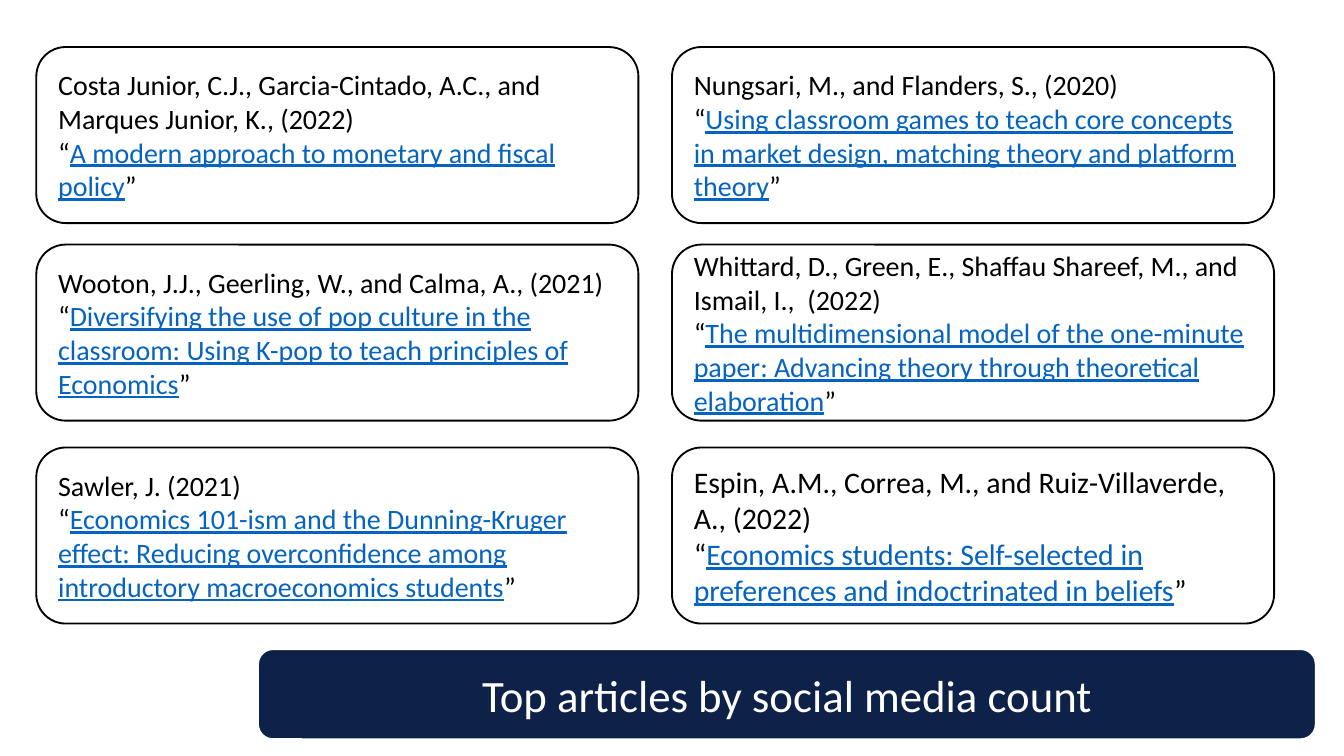
import pptx
import pptx.util
import pptx.dml.color
import pptx.enum.shapes
import pptx.enum.text
from pptx.util import Inches, Pt

RGBColor = pptx.dml.color.RGBColor
ALIGN = pptx.enum.text.PP_ALIGN
BLACK = RGBColor(0x00, 0x00, 0x00)
WHITE = RGBColor(0xFF, 0xFF, 0xFF)
NAVY = RGBColor(0x0E, 0x22, 0x49)
LINK_BLUE = RGBColor(0x05, 0x63, 0xC1)
FONT = "Calibri"

# Content: rows of (authors, article title, text size)
BANNER = "Top articles by social media count"
ARTICLES = [
    [
        ("Costa Junior, C.J., Garcia-Cintado, A.C., and Marques Junior, K., (2022)",
         "A modern approach to monetary and fiscal policy", 15),
        ("Nungsari, M., and Flanders, S., (2020)",
         "Using classroom games to teach core concepts in market design, "
         "matching theory and platform theory", 15),
    ],
    [
        ("Wooton, J.J., Geerling, W., and Calma, A., (2021)",
         "Diversifying the use of pop culture in the classroom: "
         "Using K-pop to teach principles of Economics", 15),
        ("Whittard, D., Green, E., Shaffau Shareef, M., and Ismail, I.,  (2022)",
         "The multidimensional model of the one-minute paper: "
         "Advancing theory through theoretical elaboration", 15),
    ],
    [
        ("Sawler, J. (2021)",
         "Economics 101-ism and the Dunning-Kruger effect: Reducing "
         "overconfidence among introductory macroeconomics students", 15),
        ("Espin, A.M., Correa, M., and Ruiz-Villaverde, A., (2022)",
         "Economics students: Self-selected in preferences and "
         "indoctrinated in beliefs", 16),
    ],
]

# Grid
COLUMN_LEFTS = (0.27, 5)
ROW_TOPS = (0.35, 1.82, 3.33)
CARD_W, CARD_H = 4.48, 1.31


def add_box(s, left, top, width, height, fill, line):
    box = s.shapes.add_shape(
        pptx.enum.shapes.MSO_SHAPE.ROUNDED_RECTANGLE,
        Inches(left), Inches(top), Inches(width), Inches(height))
    box.fill.solid()
    box.fill.fore_color.rgb = fill
    box.line.color.rgb = line
    box.line.width = Pt(1)
    box.shadow.inherit = False
    box.text_frame.word_wrap = True
    box.text_frame.vertical_anchor = pptx.enum.text.MSO_ANCHOR.MIDDLE
    return box


def add_text(p, text, size, color, underline=False):
    r = p.add_run()
    r.text = text
    r.font.name = FONT
    r.font.size = Pt(size)
    r.font.color.rgb = color
    r.font.underline = underline


def add_card(s, left, top, authors, article, size):
    tf = add_box(s, left, top, CARD_W, CARD_H, WHITE, BLACK).text_frame
    author_p, article_p = tf.paragraphs[0], tf.add_paragraph()
    author_p.alignment = article_p.alignment = ALIGN.LEFT
    add_text(author_p, authors, size, BLACK)
    add_text(article_p, "“", size, BLACK)
    add_text(article_p, article, size, LINK_BLUE, underline=True)
    add_text(article_p, "”", size, BLACK)


def add_banner(s):
    # Upright box turned on its side, with its text turned back
    banner = add_box(s, 5.52, 1.23, 0.67, 7.87, NAVY, WHITE)
    banner.rotation = 270
    banner.text_frame._txBody.bodyPr.set("vert", "vert")
    p = banner.text_frame.paragraphs[0]
    p.alignment = ALIGN.CENTER
    add_text(p, BANNER, 24, WHITE)


def main():
    prs = pptx.Presentation()
    prs.slide_width = Inches(10)
    prs.slide_height = prs.slide_width * 9 // 16
    s = prs.slides.add_slide(prs.slide_layouts[6])

    # Article cards
    for top, row in zip(ROW_TOPS, ARTICLES):
        for left, article in zip(COLUMN_LEFTS, row):
            add_card(s, left, top, *article)

    add_banner(s)
    prs.save("out.pptx")


if __name__ == "__main__":
    main()
